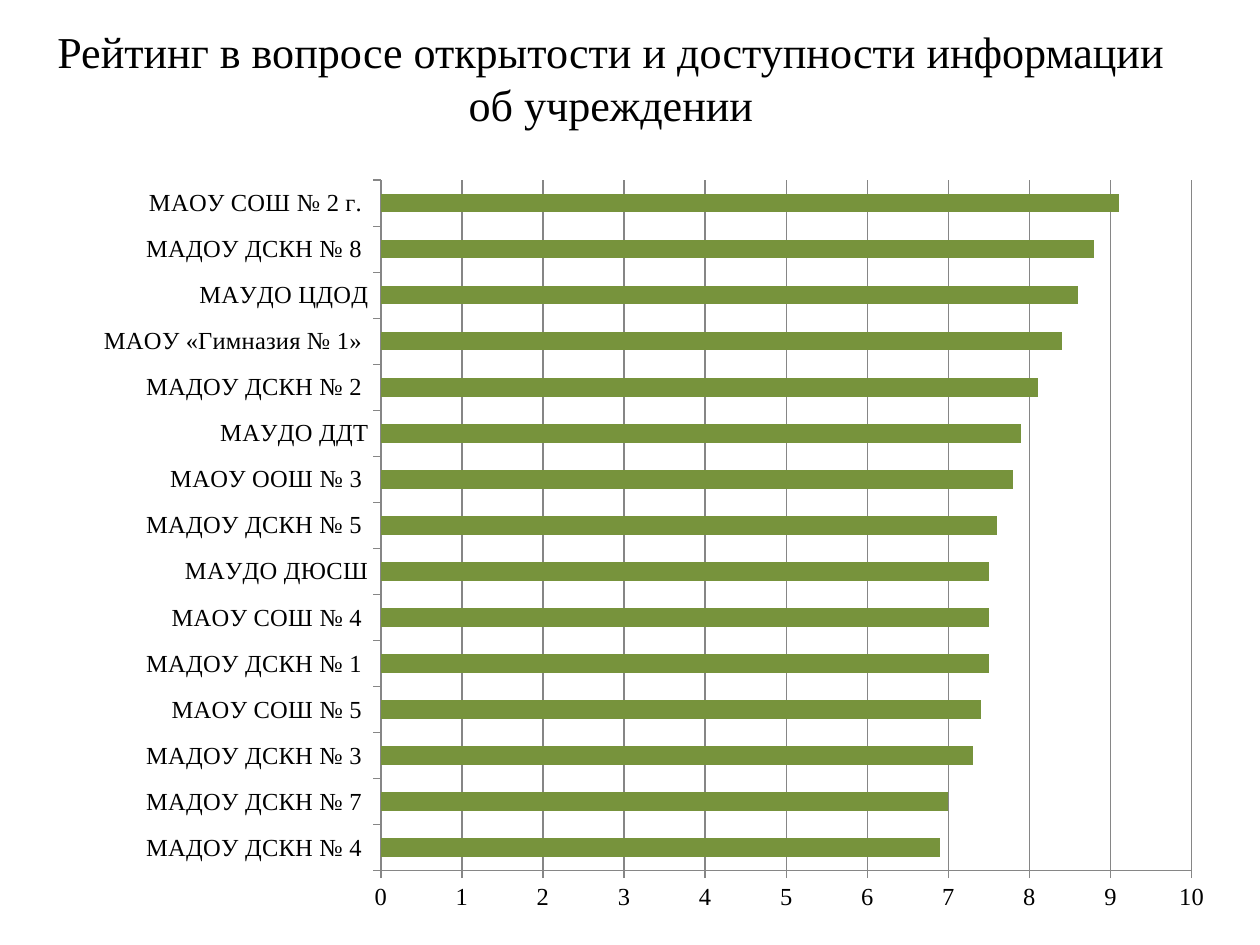
import pptx
import pptx.chart.data
import pptx.dml.color
import pptx.enum.chart
import pptx.enum.text
import pptx.oxml
import pptx.oxml.ns
import pptx.util

# Content: institutions from the lowest to the highest score
HEADING = "Рейтинг в вопросе открытости и доступности информации об учреждении"
RATINGS = [
    ("МАДОУ ДСКН № 4 ", 6.9),
    ("МАДОУ ДСКН № 7 ", 7),
    ("МАДОУ ДСКН № 3 ", 7.3),
    ("МАОУ СОШ № 5 ", 7.4),
    ("МАДОУ ДСКН № 1 ", 7.5),
    ("МАОУ СОШ № 4 ", 7.5),
    ("МАУДО ДЮСШ", 7.5),
    ("МАДОУ ДСКН № 5 ", 7.6),
    ("МАОУ ООШ № 3 ", 7.8),
    ("МАУДО ДДТ", 7.9),
    ("МАДОУ ДСКН № 2 ", 8.1),
    ("МАОУ «Гимназия № 1» ", 8.4),
    ("МАУДО ЦДОД", 8.6),
    ("МАДОУ ДСКН № 8 ", 8.8),
    ("МАОУ СОШ № 2 г. ", 9.1),
]
FONT, BLACK, GREEN, GRAY = "Times New Roman", "000000", "77933C", "868686"

# Geometry in px: left, top, width, height
SLIDE = (1260, 945)
HEADING_BOX = (25, 21, 1172, 113)
CHART_BOX = (84, 165, 1142, 759)
PLOT_BOX = (384, 180, 806, 688)
EMU_PER_PX = 914400 / 126


def emu(*lengths):
    return [pptx.util.Emu(round(length * EMU_PER_PX)) for length in lengths]


def color(hex_code):
    return pptx.dml.color.RGBColor.from_string(hex_code)


def format_font(font, size):
    font.name, font.size, font.bold = FONT, pptx.util.Pt(size), False
    font.color.rgb = color(BLACK)


def write_text(frame, text, size, align, anchor):
    frame.word_wrap = True
    frame.auto_size = pptx.enum.text.MSO_AUTO_SIZE.NONE
    frame.vertical_anchor = anchor
    paragraph = frame.paragraphs[0]
    paragraph.alignment = align
    run = paragraph.add_run()
    run.text = text
    format_font(run.font, size)


def format_line(line):
    line.color.rgb = color(GRAY)
    line.width = pptx.util.Pt(0.75)


def place_plot(chart):
    left, top, width, height = CHART_BOX
    x, y, w, h = PLOT_BOX
    shares = {"x": (x - left) / width, "y": (y - top) / height,
              "w": w / width, "h": h / height}
    modes = "".join(f'<c:{side}Mode val="edge"/>' for side in "xy")
    sizes = "".join(f'<c:{key} val="{share:.2f}"/>' for key, share in shares.items())
    layout = pptx.oxml.parse_xml(
        f'<c:layout {pptx.oxml.ns.nsdecls("c")}><c:manualLayout>'
        f'<c:layoutTarget val="inner"/>{modes}{sizes}</c:manualLayout></c:layout>')
    plot_area = chart.element.chart.plotArea
    for automatic in plot_area.findall(pptx.oxml.ns.qn("c:layout")):
        plot_area.remove(automatic)
    plot_area.insert(0, layout)


def add_rating_chart(slide):
    ratings = pptx.chart.data.CategoryChartData()
    ratings.categories = [name for name, _ in RATINGS]
    ratings.add_series("Series 1", [score for _, score in RATINGS])
    chart = slide.shapes.add_chart(
        pptx.enum.chart.XL_CHART_TYPE.BAR_CLUSTERED, *emu(*CHART_BOX), ratings).chart
    chart.has_legend = chart.has_title = False
    format_font(chart.font, 14)

    # Bars
    bars = chart.plots[0]
    bars.gap_width = 150
    bars.vary_by_categories = False
    fill = bars.series[0].format.fill
    fill.solid()
    fill.fore_color.rgb = color(GREEN)

    # Axes
    scores = chart.value_axis
    scores.minimum_scale, scores.maximum_scale, scores.major_unit = 0, 10, 1
    scores.tick_labels.number_format = "General"
    scores.tick_labels.number_format_is_linked = False
    scores.has_major_gridlines = True
    format_line(scores.major_gridlines.format.line)
    for axis in (scores, chart.category_axis):
        axis.major_tick_mark = pptx.enum.chart.XL_TICK_MARK.OUTSIDE
        axis.minor_tick_mark = pptx.enum.chart.XL_TICK_MARK.NONE
        format_line(axis.format.line)
    place_plot(chart)


def main():
    deck = pptx.Presentation()
    deck.slide_width, deck.slide_height = emu(*SLIDE)
    slide = deck.slides.add_slide(deck.slide_layouts[5])

    # Heading
    heading = slide.shapes.title
    heading.left, heading.top, heading.width, heading.height = emu(*HEADING_BOX)
    write_text(heading.text_frame, HEADING, size=25.2,
               align=pptx.enum.text.PP_ALIGN.CENTER,
               anchor=pptx.enum.text.MSO_ANCHOR.MIDDLE)

    add_rating_chart(slide)
    deck.save("out.pptx")


if __name__ == "__main__":
    main()
